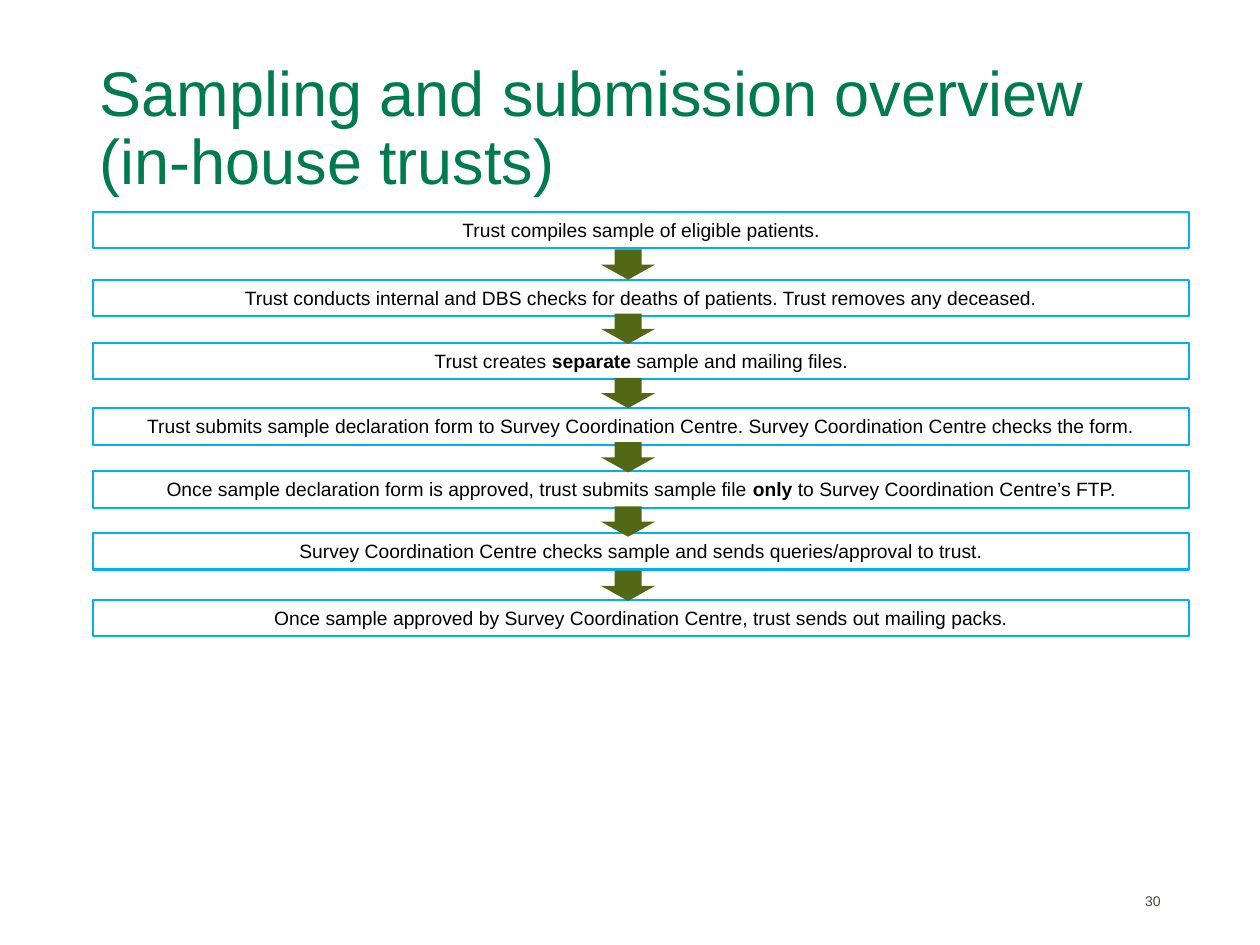
from pptx import Presentation, util as u
from pptx.dml.color import RGBColor
from pptx.enum import shapes, text

COLOURS = {"title": "007B4E", "border": "00B0F0", "arrow": "526814",
           "body": "000000", "number": "4D4639"}

# Each step: top edge in inches, then its runs as (wording, bold)
STEPS = [
    (1.68, [("Trust compiles sample of eligible patients.", False)]),
    (2.22, [("Trust conducts internal and DBS checks for deaths of patients. "
             "Trust removes any deceased.", False)]),
    (2.72, [("Trust creates ", False), ("separate", True),
            (" sample and mailing files.", False)]),
    (3.24, [("Trust submits sample declaration form to Survey Coordination Centre. "
             "Survey Coordination Centre checks the form.", False)]),
    (3.74, [("Once sample declaration form is approved, trust submits sample file ", False),
            ("only ", True), ("to Survey Coordination Centre’s FTP.", False)]),
    (4.23, [("Survey Coordination Centre checks sample and sends queries/approval "
             "to trust.", False)]),
    (4.76, [("Once sample approved by Survey Coordination Centre, trust sends out "
             "mailing packs.", False)]),
]
STEP_LEFT, STEP_WIDTH, STEP_HEIGHT = 0.74, 8.7, 0.29
ARROW_LEFT, ARROW_TOP, ARROW_PITCH = 4.77, 1.98, 0.51


def add_run(paragraph, wording, size, colour, bold=False):
    run = paragraph.add_run()
    run.text = wording
    run.font.name = "Arial"
    run.font.size = u.Pt(size)
    run.font.bold = bold
    run.font.color.rgb = RGBColor.from_string(COLOURS[colour])


def inches(*lengths):
    return [u.Inches(length) for length in lengths]


deck = Presentation()
deck.slide_width, deck.slide_height = inches(10, 7.5)
slide = deck.slides.add_slide(deck.slide_layouts.get_by_name("Title Only"))

title = slide.shapes.title
title.left, title.top, title.width, title.height = inches(0.69, 0.4, 8.62, 1.26)
title.text_frame.auto_size = text.MSO_AUTO_SIZE.NONE
title.text_frame.vertical_anchor = text.MSO_ANCHOR.MIDDLE
heading = title.text_frame.paragraphs[0]
heading.alignment = text.PP_ALIGN.LEFT
heading.line_spacing = 0.9
add_run(heading, "Sampling and submission overview (in-house trusts)", 36, "title")

for top, runs in STEPS:
    step = slide.shapes.add_shape(shapes.MSO_SHAPE.RECTANGLE,
                                  *inches(STEP_LEFT, top, STEP_WIDTH, STEP_HEIGHT))
    step.shadow.inherit = False
    step.fill.background()
    step.line.color.rgb = RGBColor.from_string(COLOURS["border"])
    step.line.width = u.Pt(1.25)
    step.text_frame.word_wrap = True
    step.text_frame.auto_size = text.MSO_AUTO_SIZE.SHAPE_TO_FIT_TEXT
    step.text_frame.vertical_anchor = text.MSO_ANCHOR.TOP
    sentence = step.text_frame.paragraphs[0]
    sentence.alignment = text.PP_ALIGN.CENTER
    for wording, bold in runs:
        add_run(sentence, wording, 11, "body", bold)

for row in range(len(STEPS) - 1):
    arrow = slide.shapes.add_shape(
        shapes.MSO_SHAPE.DOWN_ARROW,
        *inches(ARROW_LEFT, ARROW_TOP + row * ARROW_PITCH, 0.43, 0.24))
    arrow.shadow.inherit = False
    arrow.fill.solid()
    arrow.fill.fore_color.rgb = RGBColor.from_string(COLOURS["arrow"])
    arrow.line.fill.background()

page_number = slide.shapes.add_textbox(*inches(7.06, 6.95, 2.25, 0.4)).text_frame
page_number.word_wrap = True
page_number.vertical_anchor = text.MSO_ANCHOR.MIDDLE
page_number.paragraphs[0].alignment = text.PP_ALIGN.RIGHT
add_run(page_number.paragraphs[0], "30", 8, "number")

deck.save("out.pptx")
